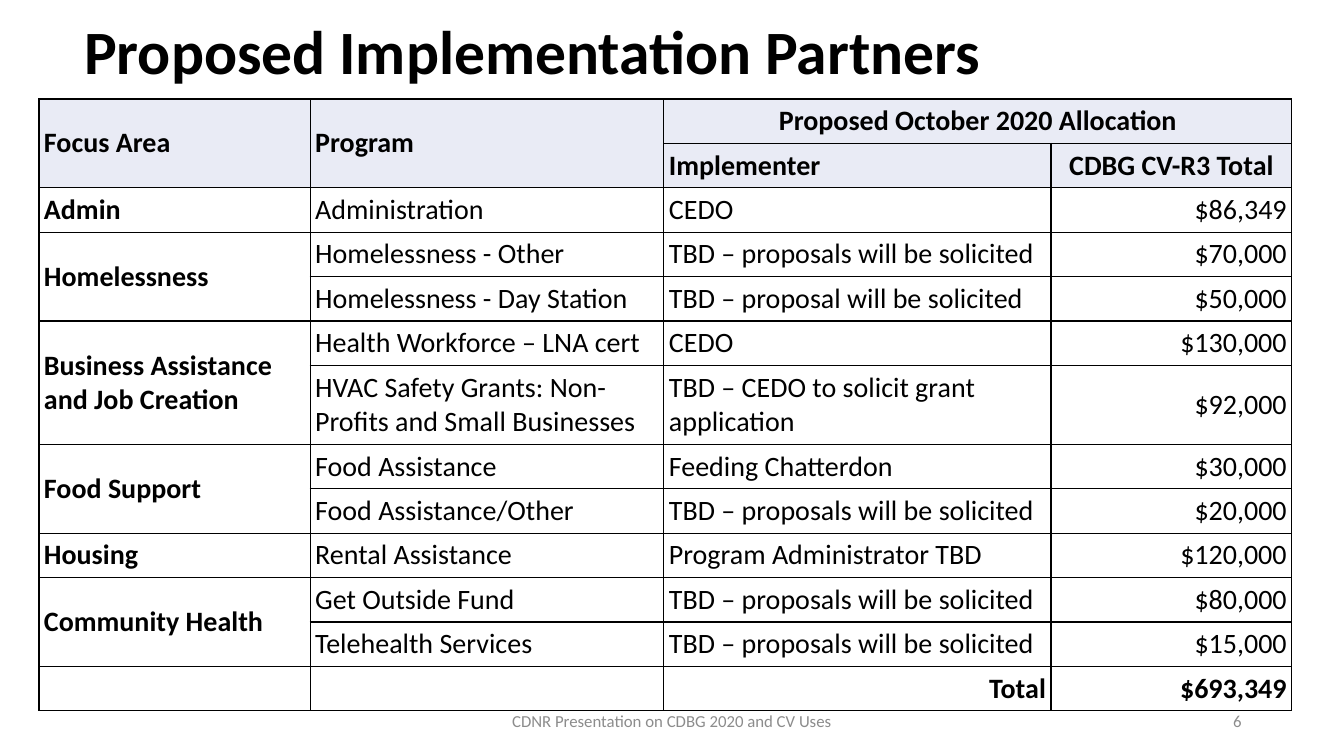
from lxml import etree
from pptx import Presentation
from pptx.dml.color import RGBColor
from pptx.enum.text import MSO_ANCHOR, PP_ALIGN
from pptx.oxml.ns import qn
from pptx.util import Pt

LEFT, CENTER, RIGHT = PP_ALIGN.LEFT, PP_ALIGN.CENTER, PP_ALIGN.RIGHT
MIDDLE, BOTTOM = MSO_ANCHOR.MIDDLE, MSO_ANCHOR.BOTTOM
FONT = "Calibri"
COLORS = {"text": "000000", "header": "E9EBF5", "body": "FFFFFF", "footer": "8C8C8C"}


def write(frame, text, size, color, align=LEFT, bold=False):
    frame.text = text
    paragraph = frame.paragraphs[0]
    paragraph.alignment = align
    for run in paragraph.runs:
        run.font.name = FONT
        run.font.size = Pt(size)
        run.font.bold = bold
        run.font.color.rgb = RGBColor.from_string(COLORS[color])


def add_borders(cell):
    properties = cell._tc.get_or_add_tcPr()
    for side in ("lnL", "lnR", "lnT", "lnB"):
        line = etree.SubElement(properties, qn(f"a:{side}"), w=str(Pt(1)))
        fill = etree.SubElement(line, qn("a:solidFill"))
        etree.SubElement(fill, qn("a:srgbClr"), val=COLORS["text"])


prs = Presentation()
prs.slide_width, prs.slide_height = Pt(960), Pt(540)
slide = prs.slides.add_slide(prs.slide_layouts[5])

title = slide.shapes.title
title.left, title.top, title.width, title.height = Pt(52.8), Pt(-13), Pt(828), Pt(104.4)
write(title.text_frame, "Proposed Implementation Partners", 44, "text", bold=True)
title.text_frame.vertical_anchor = MIDDLE
title.text_frame.paragraphs[0].line_spacing = 0.9

allocations = [
    ("Focus Area", "Program", "Proposed October 2020 Allocation", ""),
    ("", "", "Implementer", "CDBG CV-R3 Total"),
    ("Admin", "Administration", "CEDO", "$86,349"),
    ("Homelessness", "Homelessness - Other", "TBD – proposals will be solicited", "$70,000"),
    ("", "Homelessness - Day Station", "TBD – proposal will be solicited", "$50,000"),
    ("Business Assistance and Job Creation", "Health Workforce – LNA cert", "CEDO", "$130,000"),
    ("", "HVAC Safety Grants: Non-Profits and Small Businesses",
     "TBD – CEDO to solicit grant application", "$92,000"),
    ("Food Support", "Food Assistance", "Feeding Chatterdon", "$30,000"),
    ("", "Food Assistance/Other", "TBD – proposals will be solicited", "$20,000"),
    ("Housing", "Rental Assistance", "Program Administrator TBD", "$120,000"),
    ("Community Health", "Get Outside Fund", "TBD – proposals will be solicited", "$80,000"),
    ("", "Telehealth Services", "TBD – proposals will be solicited", "$15,000"),
    ("", "", "Total", "$693,349"),
]
HEADER_ROWS, HVAC_ROW, TOTAL_ROW = 2, 6, len(allocations) - 1

table = slide.shapes.add_table(
    len(allocations), 4, Pt(27.8), Pt(70.7), Pt(895), Pt(436.8)).table
table.first_row = table.horz_banding = False
for column, width in zip(table.columns, (193.7, 252.7, 276.5, 172.1)):
    column.width = Pt(width)

for r, allocation in enumerate(allocations):
    table.rows[r].height = Pt(56.4 if r == HVAC_ROW else 31.7)
    for c, text in enumerate(allocation):
        cell = table.cell(r, c)
        header = r < HEADER_ROWS
        if header:
            align = CENTER if text.startswith(("Proposed", "CDBG")) else LEFT
        else:
            align = RIGHT if c == 3 or r == TOTAL_ROW else LEFT
        bold = header or c == 0 or r == TOTAL_ROW
        write(cell.text_frame, text, 20, "text", align, bold)
        cell.vertical_anchor = MIDDLE if c == 0 or r == HVAC_ROW or (header and c == 1) else BOTTOM
        cell.margin_left = cell.margin_right = cell.margin_top = cell.margin_bottom = Pt(3.6)
        add_borders(cell)
        cell.fill.solid()
        cell.fill.fore_color.rgb = RGBColor.from_string(COLORS["header" if header else "body"])

table.cell(0, 1).merge(table.cell(1, 1))
table.cell(0, 2).merge(table.cell(0, 3))
for first in (0, 3, 5, 7, 10):
    table.cell(first, 0).merge(table.cell(first + 1, 0))

for text, left, width, align in (
    ("CDNR Presentation on CDBG 2020 and CV Uses", 318, 324, CENTER),
    ("6", 678, 216, RIGHT),
):
    footer = slide.shapes.add_textbox(Pt(left), Pt(500.5), Pt(width), Pt(28.8)).text_frame
    footer.word_wrap = True
    footer.vertical_anchor = MIDDLE
    write(footer, text, 12, "footer", align)

prs.save("out.pptx")
